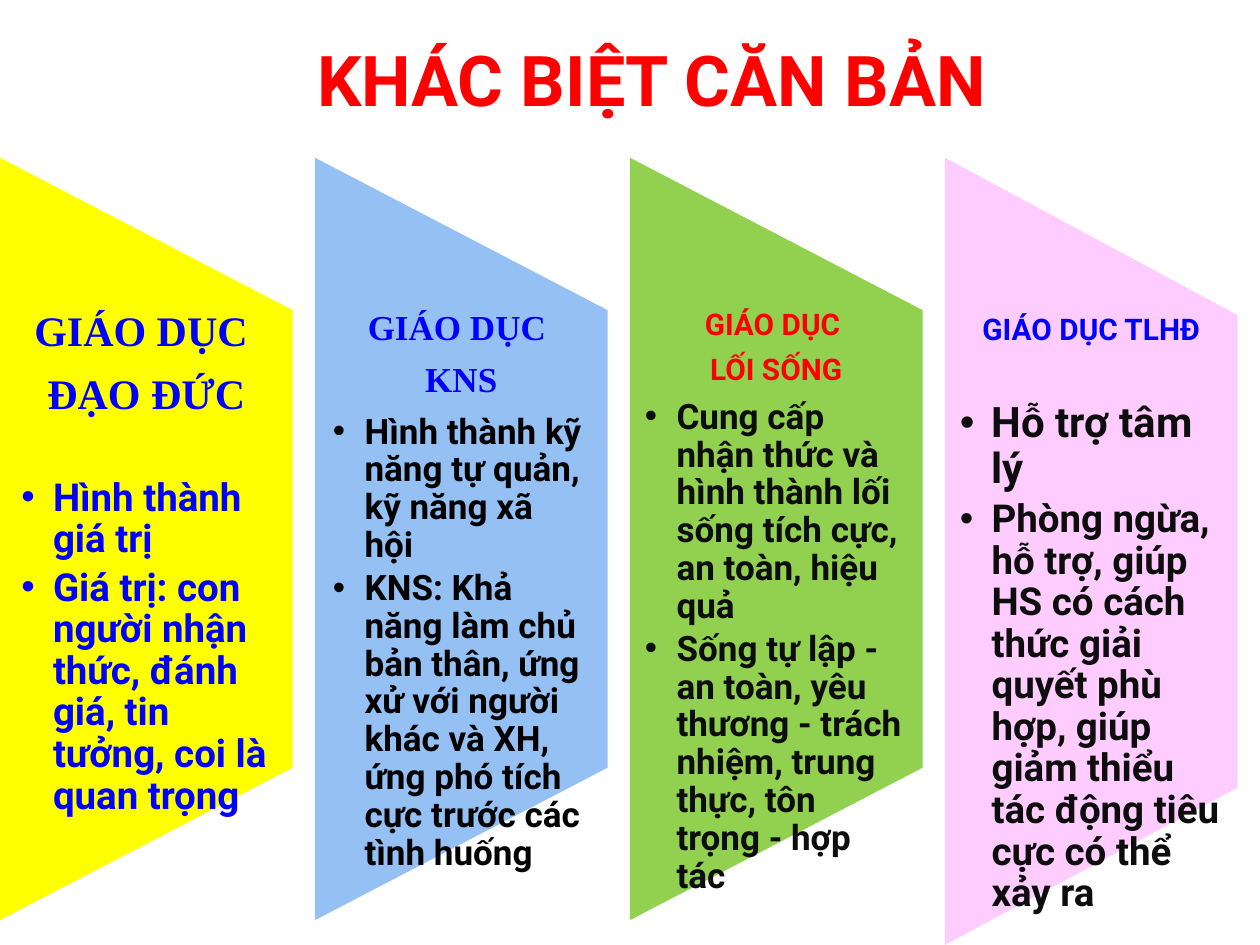
"""Build a slide comparing four kinds of education in slanted panels."""
import pptx
import pptx.util
import pptx.dml.color
import pptx.enum.text
import pptx.oxml
import pptx.oxml.ns
from pptx.util import Cm

COLOURS = {
    "yellow": "FFFF00", "sky": "94C0F4", "green": "92D050", "pink": "FFCCFF",
    "blue": "0000FF", "red": "FF0000", "black": "000000", "ink": "0D0D0D",
}
SANS, SERIF = "Roboto", "Times New Roman"
PITCH, WIDTH, TOP, SLANT = 6.35, 5.9, 3.18, 0.2
PANELS = [
    {
        "fill": "yellow", "height": 15.37, "inset": 0.43, "gap": 34,
        "heading": (["GIÁO DỤC ", "ĐẠO ĐỨC"], SERIF, 24, "blue"),
        "ink": "blue",
        "bullets": [
            ("Hình thành giá trị", 22),
            ("Giá trị: con người nhận thức, đánh giá, tin tưởng, coi là quan trọng", 22),
        ],
    },
    {
        "fill": "sky", "height": 15.37, "inset": 0.36, "gap": 8,
        "heading": (["GIÁO DỤC ", "KNS"], SERIF, 20, "blue"),
        "ink": "black",
        "bullets": [
            ("Hình thành kỹ năng tự quản, kỹ năng xã hội", 20),
            ("KNS: Khả năng làm chủ bản thân, ứng xử với người khác và XH, "
             "ứng phó tích cực trước các tình huống", 20),
        ],
    },
    {
        "fill": "green", "height": 15.37, "inset": 0.3, "gap": 7,
        "heading": (["GIÁO DỤC ", "LỐI SỐNG"], SANS, 17, "red"),
        "ink": "ink",
        "bullets": [
            ("Cung cấp nhận thức và hình thành lối sống tích cực, an toàn, hiệu quả", 20),
            ("Sống tự lập - an toàn, yêu thương - trách nhiệm, trung thực, "
             "tôn trọng - hợp tác", 20),
        ],
    },
    {
        "fill": "pink", "height": 15.87, "inset": 0.3, "gap": 31,
        "heading": (["GIÁO DỤC TLHĐ"], SANS, 17, "blue"),
        "ink": "ink",
        "bullets": [
            ("Hỗ trợ tâm lý", 24),
            ("Phòng ngừa, hỗ trợ, giúp HS có cách thức giải quyết phù hợp, "
             "giúp giảm thiểu tác động tiêu cực có thể xảy ra", 22),
        ],
    },
]


def apply(target, values):
    for name, value in values.items():
        setattr(target, name, value)


def colour(name):
    return pptx.dml.color.RGBColor.from_string(COLOURS[name])


def write(para, text, font, size, ink):
    span = para.add_run()
    span.text = text
    apply(span.font, {"name": font, "size": pptx.util.Pt(size), "bold": True})
    span.font.color.rgb = colour(ink)


def add_title(slide, text):
    title = slide.shapes.title
    apply(title, {"left": Cm(3.63), "top": Cm(0), "width": Cm(19), "height": Cm(3.18)})
    apply(title.text_frame, {
        "word_wrap": True,
        "auto_size": pptx.enum.text.MSO_AUTO_SIZE.NONE,
        "vertical_anchor": pptx.enum.text.MSO_ANCHOR.MIDDLE,
    })
    para = title.text_frame.paragraphs[0]
    para.alignment = pptx.enum.text.PP_ALIGN.CENTER
    write(para, text, SANS, 40, "red")


def add_panel(slide, left, height, fill):
    right, bottom, cut = left + WIDTH, TOP + height, SLANT * height
    builder = slide.shapes.build_freeform(Cm(left), Cm(bottom))
    corners = [(left, TOP), (right, TOP + cut), (right, bottom - cut)]
    builder.add_line_segments([(Cm(x), Cm(y)) for x, y in corners], close=True)
    panel = builder.convert_to_shape()
    panel.shadow.inherit = False
    panel.fill.solid()
    panel.fill.fore_color.rgb = colour(fill)
    panel.line.fill.background()
    return panel


def set_bullet(para):
    properties = para._p.get_or_add_pPr()
    properties.set("marL", str(Cm(0.64)))
    properties.set("indent", str(-Cm(0.64)))
    namespace = pptx.oxml.ns.nsdecls("a")
    for tag in (f'<a:buFont {namespace} typeface="Arial"/>',
                f'<a:buChar {namespace} char="•"/>'):
        properties.append(pptx.oxml.parse_xml(tag))


def fill_panel(panel, content):
    frame = panel.text_frame
    side, end = Cm(content["inset"]), Cm(SLANT * content["height"])
    apply(frame, {
        "word_wrap": True, "vertical_anchor": pptx.enum.text.MSO_ANCHOR.TOP,
        "margin_left": side, "margin_right": side,
        "margin_top": end, "margin_bottom": end,
    })
    lines, font, size, ink = content["heading"]
    for number, line in enumerate(lines):
        para = frame.add_paragraph() if number else frame.paragraphs[0]
        last = number == len(lines) - 1
        apply(para, {
            "alignment": pptx.enum.text.PP_ALIGN.CENTER, "line_spacing": 0.9,
            "space_after": pptx.util.Pt(content["gap"] if last else round(0.4 * size)),
        })
        write(para, line, font, size, ink)
    for text, size in content["bullets"]:
        para = frame.add_paragraph()
        apply(para, {
            "alignment": pptx.enum.text.PP_ALIGN.LEFT, "level": 1, "line_spacing": 0.9,
            "space_after": pptx.util.Pt(round(0.17 * size)),
        })
        set_bullet(para)
        write(para, text, SANS, size, content["ink"])


def main():
    deck = pptx.Presentation()
    apply(deck, {"slide_width": Cm(25.4), "slide_height": Cm(19.05)})
    slide = deck.slides.add_slide(deck.slide_layouts.get_by_name("Title Only"))
    add_title(slide, "KHÁC BIỆT CĂN BẢN")
    for column, content in enumerate(PANELS):
        panel = add_panel(slide, column * PITCH, content["height"], content["fill"])
        fill_panel(panel, content)
    deck.save("out.pptx")


if __name__ == "__main__":
    main()
